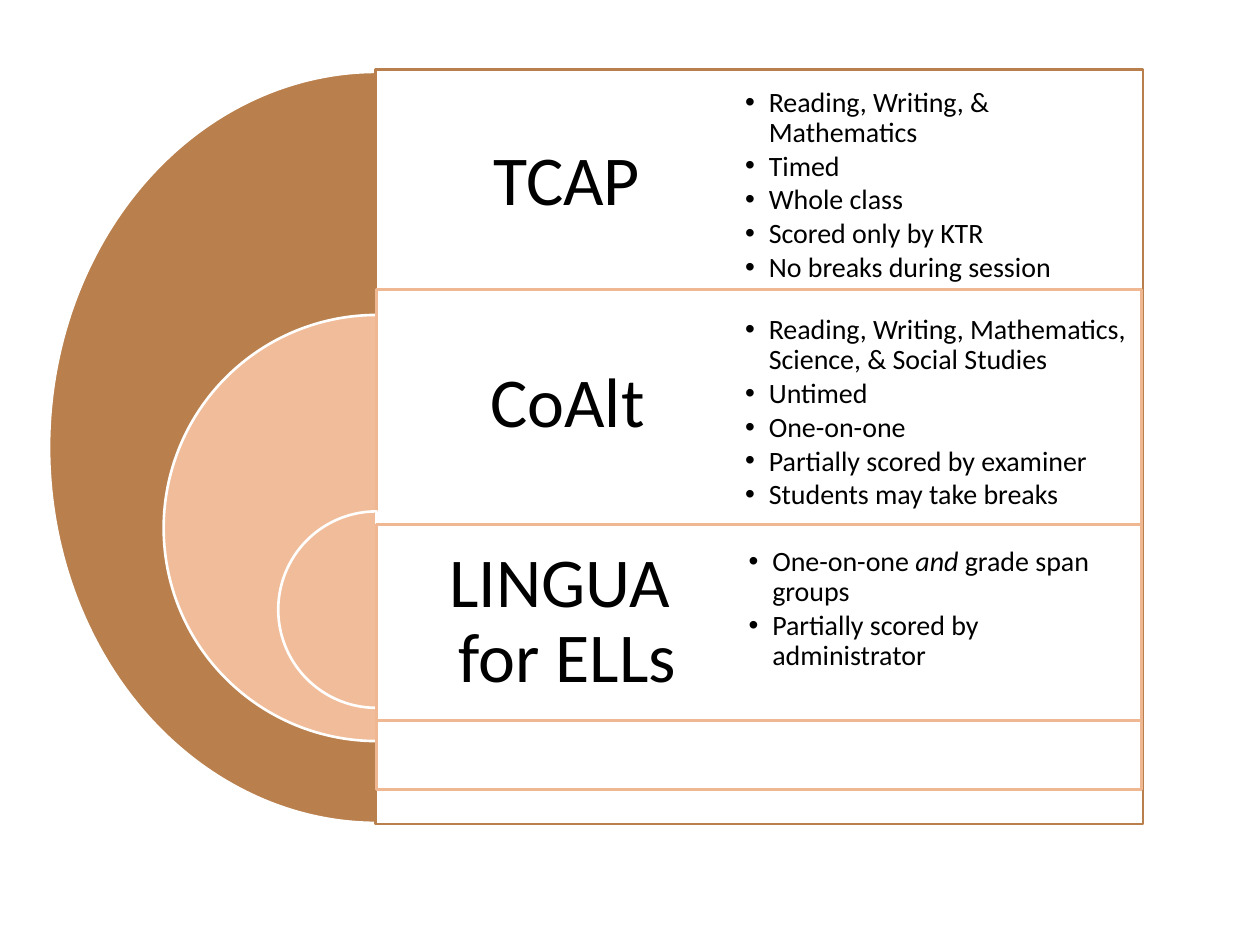
"""Build a slide that compares three assessments with nested half circles and panels."""
from lxml.etree import SubElement
from pptx import Presentation
from pptx.dml.color import RGBColor
from pptx.enum.shapes import MSO_SHAPE as Shape
from pptx.enum.text import MSO_ANCHOR as Anchor, PP_ALIGN as Align
from pptx.oxml.ns import qn
from pptx.util import Cm, Pt

COLORS = {"brown": "B97F4C", "peach": "F1BC9A", "edge": "F0B892", "white": "FFFFFF", "black": "000000"}
LABEL_FONT = {"name": "Calibri", "size": Pt(40)}
BULLET_FONT = {"name": "Calibri", "size": Pt(16)}

ASSESSMENTS = [
    {
        "label": "TCAP", "fill": "brown", "edge": "brown",
        "pie": (0.99, 1.45, 13.21, 15.14), "panel": (7.57, 1.4, 15.47, 15.21),
        "label_size": (7.72, 4.57), "details": (14.33, 1.32, 9.22, 4.85),
        "bullets": [["Reading, Writing, & Mathematics"], ["Timed"], ["Whole class"],
                    ["Scored only by KTR"], ["No breaks during session"]],
    },
    {
        "label": "CoAlt", "fill": "peach", "edge": "edge",
        "pie": (3.3, 6.35, 8.59, 8.59), "panel": (7.59, 5.84, 15.42, 10.08),
        "label_size": (7.7, 4.65), "details": (14.33, 6.35, 9.68, 3.96),
        "bullets": [["Reading, Writing, Mathematics, Science, & Social Studies"], ["Untimed"],
                    ["One-on-one"], ["Partially scored by examiner"], ["Students may take breaks"]],
    },
    {
        "label": "LINGUA \nfor ELLs", "fill": "peach", "edge": "edge",
        "pie": (5.61, 10.31, 3.96, 3.96), "panel": (7.59, 10.57, 15.42, 3.96),
        "label_size": (7.7, 3.96), "details": (14.4, 10.31, 8.31, 3.96),
        "bullets": [["One-on-one ", "and", " grade span groups"], ["Partially scored by administrator"]],
    },
]


def add_block(kind, box, fill, edge):
    shape = slide.shapes.add_shape(kind, *map(Cm, box))
    shape.shadow.inherit = False
    shape.fill.solid()
    shape.fill.fore_color.rgb = RGBColor.from_string(COLORS[fill])
    shape.line.color.rgb = RGBColor.from_string(COLORS[edge])
    shape.line.width = Pt(1.5)
    return shape


def add_text_frame(box, inset):
    frame = slide.shapes.add_textbox(*map(Cm, box)).text_frame
    frame.word_wrap = True
    frame.vertical_anchor = Anchor.MIDDLE
    for side in ("left", "top", "right", "bottom"):
        setattr(frame, f"margin_{side}", Cm(inset))
    return frame


presentation = Presentation()
presentation.slide_width, presentation.slide_height = Cm(25.4), Cm(19.05)
slide = presentation.slides.add_slide(presentation.slide_layouts[6])

for assessment in ASSESSMENTS:
    pie = add_block(Shape.PIE, assessment["pie"], assessment["fill"], "white")
    pie.adjustments[0], pie.adjustments[1] = 54, 162
    panel = add_block(Shape.RECTANGLE, assessment["panel"], "white", assessment["edge"])
    panel_color = panel.fill._xPr.find(qn("a:solidFill"))[0]
    SubElement(panel_color, qn("a:alpha"), val="90000")
    frame = add_text_frame(assessment["panel"][:2] + assessment["label_size"], 0.43)
    paragraph = frame.paragraphs[0]
    paragraph.text = assessment["label"]
    paragraph.alignment = Align.CENTER
    paragraph.line_spacing = 0.9
    for run in paragraph.runs:
        run.font.color.rgb = RGBColor.from_string(COLORS["black"])
        for name, value in LABEL_FONT.items():
            setattr(run.font, name, value)

for assessment in ASSESSMENTS:
    frame = add_text_frame(assessment["details"], 0.69)
    for index, pieces in enumerate(assessment["bullets"]):
        paragraph = frame.add_paragraph() if index else frame.paragraphs[0]
        paragraph.level = 1
        paragraph.line_spacing = 0.9
        paragraph.space_after = Pt(2)
        properties = paragraph._p.get_or_add_pPr()
        properties.set("marL", str(Cm(0.48)))
        properties.set("indent", str(-Cm(0.48)))
        SubElement(properties, qn("a:buFont"), typeface="Arial")
        SubElement(properties, qn("a:buChar"), char="•")
        for piece in pieces:
            run = paragraph.add_run()
            run.text = piece
            run.font.italic = piece == "and"
            run.font.color.rgb = RGBColor.from_string(COLORS["black"])
            for name, value in BULLET_FONT.items():
                setattr(run.font, name, value)

presentation.save("out.pptx")
